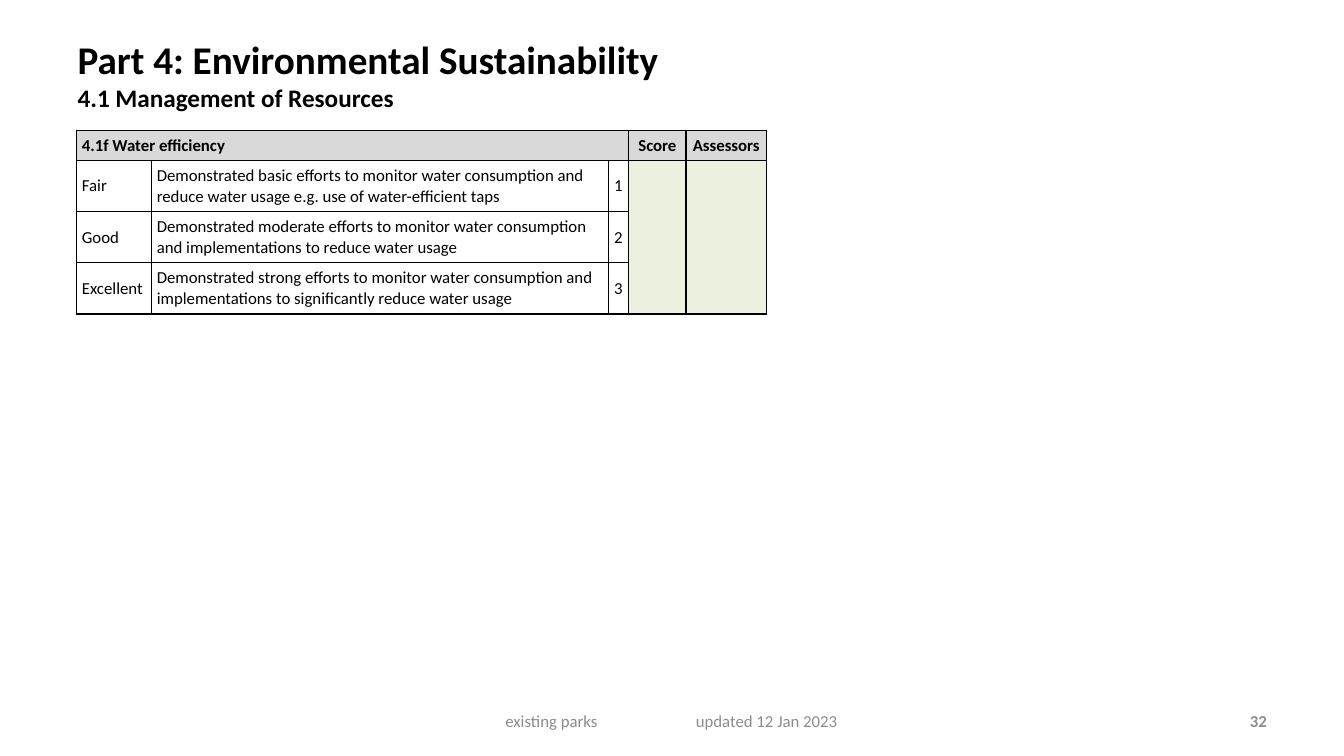
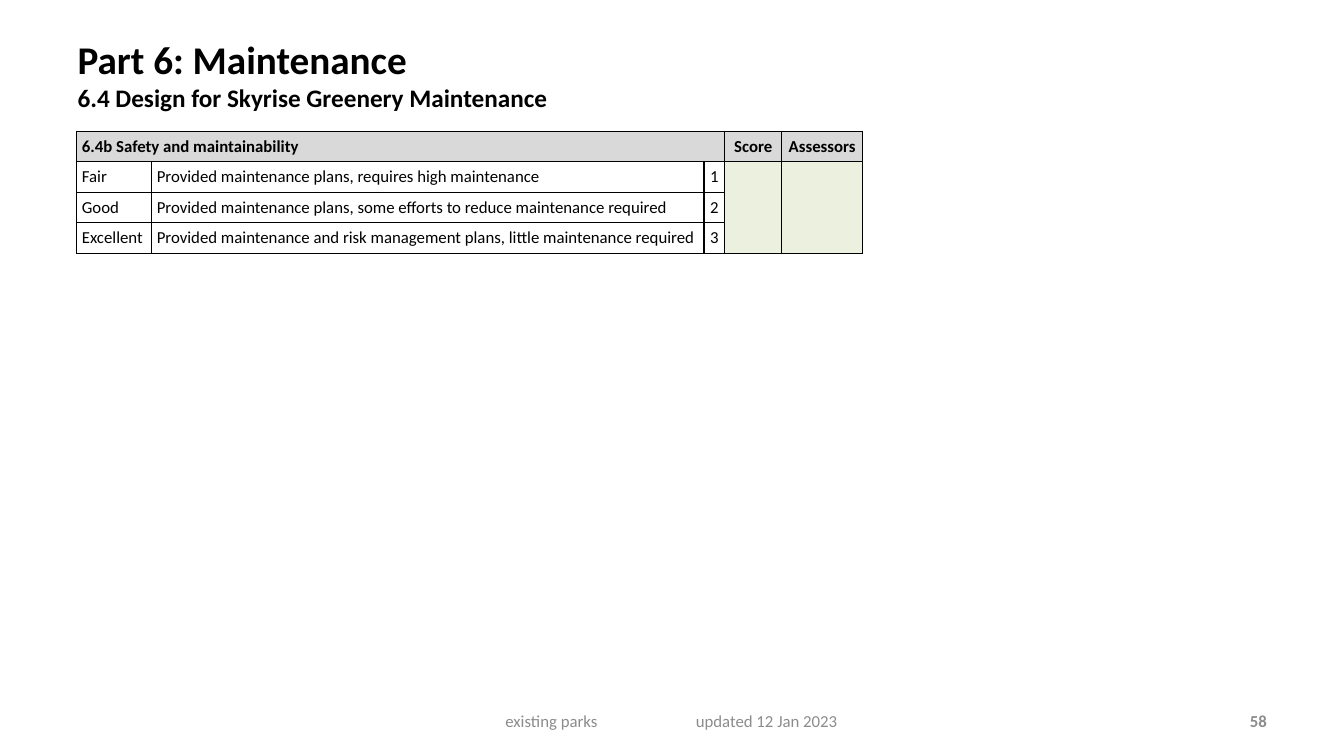
from lxml import etree
from pptx import Presentation
from pptx.dml.color import RGBColor
from pptx.enum.text import MSO_ANCHOR, MSO_AUTO_SIZE, PP_ALIGN
from pptx.oxml.ns import qn
from pptx.util import Pt

LEFT, MID, RIGHT = PP_ALIGN.LEFT, PP_ALIGN.CENTER, PP_ALIGN.RIGHT
TOP, CENTER = MSO_ANCHOR.TOP, MSO_ANCHOR.MIDDLE
NO_FIT = MSO_AUTO_SIZE.NONE

FONT = "Calibri"
BLACK, GREY, HEAD, INPUT = "000000", "8C8C8C", "D9D9D9", "EBF1DE"
INSET = 3.6
HEAD_ROW = 21.8
GRADES = ("Fair", "Good", "Excellent")


def color(code):
    return RGBColor.from_string(code)


class Deck:
    """Holds the shared style and the current slide."""

    def __init__(self):
        self.prs = Presentation()
        self.prs.slide_width, self.prs.slide_height = Pt(960), Pt(540)
        self.slide = None

    def start(self, part, topic, number):
        self.slide = self.prs.slides.add_slide(self.prs.slide_layouts[5])
        self.title(part, topic)
        self.footer(number)

    def style(self, para, size, bold=False, tint=BLACK, align=LEFT):
        para.alignment = align
        font = para.font
        font.name, font.size, font.bold = FONT, Pt(size), bold
        font.color.rgb = color(tint)

    def title(self, part, topic):
        shape = self.slide.shapes.title
        shape.left, shape.top = Pt(48.2), Pt(21.6)
        shape.width, shape.height = Pt(746), Pt(71.3)
        frame = shape.text_frame
        frame.auto_size, frame.vertical_anchor = NO_FIT, TOP
        frame.text = f"{part}\n{topic}"
        for para, size in zip(frame.paragraphs, (28, 18)):
            self.style(para, size, bold=True)

    def label(self, text, left, width, bold=False, align=LEFT, tab=None):
        box = self.slide.shapes.add_textbox(
            Pt(left), Pt(500.6), Pt(width), Pt(28.8))
        frame = box.text_frame
        frame.word_wrap, frame.vertical_anchor = True, CENTER
        frame.margin_left = frame.margin_right = 0
        para = frame.paragraphs[0]
        para.text = text
        if tab:
            tabs = etree.SubElement(para._p.get_or_add_pPr(), qn("a:tabLst"))
            etree.SubElement(tabs, qn("a:tab"), pos=str(Pt(tab)), algn="l")
        self.style(para, 12, bold, GREY, align)

    def footer(self, number):
        self.label("existing parks\tupdated 12 Jan 2023", 361, 248, tab=136)
        self.label(str(number), 688, 217, bold=True, align=RIGHT)

    def border(self, cell):
        props = cell._tc.get_or_add_tcPr()
        for rank, side in enumerate(("lnL", "lnR", "lnT", "lnB")):
            line = etree.Element(qn(f"a:{side}"), w=str(Pt(1)))
            fill = etree.SubElement(line, qn("a:solidFill"))
            etree.SubElement(fill, qn("a:srgbClr"), val=BLACK)
            props.insert(rank, line)

    def cell(self, cell, text, bold, fill, align):
        cell.margin_left = cell.margin_right = Pt(INSET)
        cell.margin_top = cell.margin_bottom = Pt(INSET)
        cell.vertical_anchor = CENTER
        if fill:
            cell.fill.solid()
            cell.fill.fore_color.rgb = color(fill)
        else:
            cell.fill.background()
        self.border(cell)
        para = cell.text_frame.paragraphs[0]
        para.text = text
        self.style(para, 12, bold, align=align)

    def rubric(self, name, levels, top, wide, tall):
        """Scoring table: one row per grade, with merged score cells."""
        cols = (53.5, wide, 14.8, 40.8, 57.6)
        rows = [HEAD_ROW] + [tall] * len(levels)
        grid = [(name, "", "", "Score", "Assessors")]
        grid += [(grade, level, str(mark), "", "") for mark, (grade, level)
                 in enumerate(zip(GRADES, levels), 1)]
        table = self.slide.shapes.add_table(
            len(rows), len(cols), Pt(54.9), Pt(top),
            Pt(sum(cols)), Pt(sum(rows))).table
        table.first_row = table.horz_banding = False
        for col, width in zip(table.columns, cols):
            col.width = Pt(width)
        for row, height in zip(table.rows, rows):
            row.height = Pt(height)

        for r, line in enumerate(grid):
            for c, text in enumerate(line):
                fill = HEAD if r == 0 else INPUT if c > 2 else None
                self.cell(table.cell(r, c), text, r == 0, fill,
                          MID if c > 1 else LEFT)

        # Merged heading and score areas
        table.cell(0, 0).merge(table.cell(0, 2))
        for c in (3, 4):
            table.cell(1, c).merge(table.cell(len(levels), c))


def main():
    deck = Deck()

    # Water efficiency
    deck.start("Part 4: Environmental Sustainability",
               "4.1 Management of Resources", 32)
    deck.rubric("4.1f Water efficiency", (
        "Demonstrated basic efforts to monitor water consumption and "
        "reduce water usage e.g. use of water-efficient taps",
        "Demonstrated moderate efforts to monitor water consumption "
        "and implementations to reduce water usage",
        "Demonstrated strong efforts to monitor water consumption and "
        "implementations to significantly reduce water usage",
    ), top=93, wide=326, tall=36.5)

    # Safety and maintainability
    deck.start("Part 6: Maintenance",
               "6.4 Design for Skyrise Greenery Maintenance", 58)
    deck.rubric("6.4b Safety and maintainability", (
        "Provided maintenance plans, requires high maintenance",
        "Provided maintenance plans, some efforts to reduce "
        "maintenance required",
        "Provided maintenance and risk management plans, little "
        "maintenance required",
    ), top=93.8, wide=394.5, tall=HEAD_ROW)

    deck.prs.save("out.pptx")


if __name__ == "__main__":
    main()
